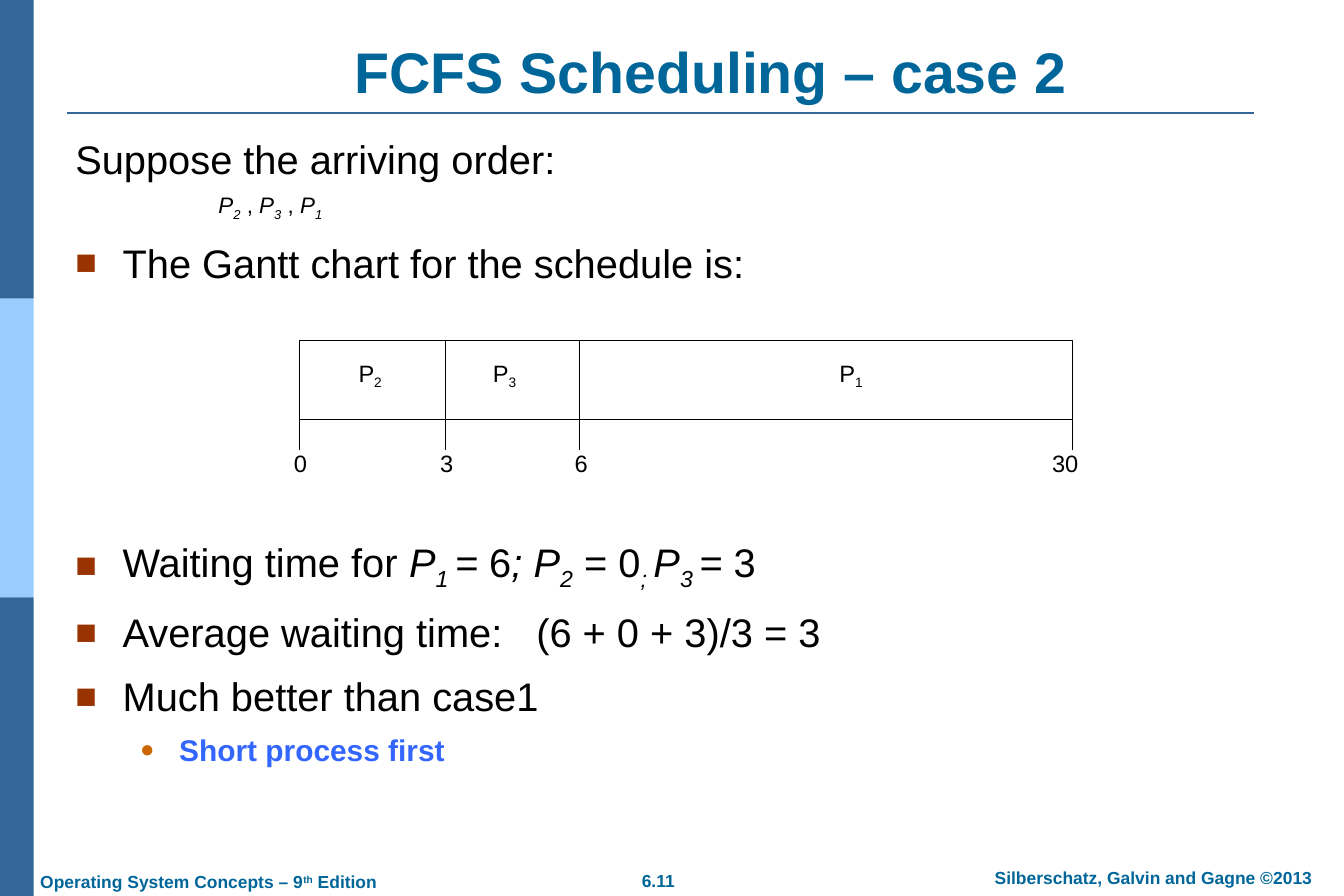
import pptx
import pptx.util
import pptx.dml.color
import pptx.enum.shapes
import pptx.enum.text
import pptx.oxml.ns
from lxml import etree

Pt = pptx.util.Pt
RGBColor = pptx.dml.color.RGBColor
Shape = pptx.enum.shapes.MSO_SHAPE
Align = pptx.enum.text.PP_ALIGN
Anchor = pptx.enum.text.MSO_ANCHOR
qn = pptx.oxml.ns.qn

TEAL = RGBColor(0x00, 0x66, 0x99)
NAVY = RGBColor(0x33, 0x66, 0x99)
SKY = RGBColor(0x99, 0xCC, 0xFF)
BLUE = RGBColor(0x33, 0x66, 0xFF)
RUST = RGBColor(0x99, 0x33, 0x00)
ORANGE = RGBColor(0xCC, 0x66, 0x00)
BLACK = RGBColor(0, 0, 0)
WHITE = RGBColor(255, 255, 255)

deck = pptx.Presentation()
deck.slide_width, deck.slide_height = Pt(1080), Pt(720)
page = deck.slides.add_slide(deck.slide_layouts[6])


def add_text(left, top, width, height, paragraphs, size, color=BLACK, bold=False,
             align=Align.CENTER, anchor=Anchor.TOP, inset=(10, 5), wrap=True):
    """Each paragraph is a list of (text, style); style holds i (italic), + or - (raised, lowered)."""
    box = page.shapes.add_textbox(Pt(left), Pt(top), Pt(width), Pt(height))
    frame = box.text_frame
    frame.word_wrap = wrap
    frame.vertical_anchor = anchor
    frame.margin_left = frame.margin_right = Pt(inset[0])
    frame.margin_top = frame.margin_bottom = Pt(inset[1])
    for number, spans in enumerate(paragraphs):
        para = frame.add_paragraph() if number else frame.paragraphs[0]
        para.alignment = align
        for text, style in spans:
            span = para.add_run()
            span.text = text
            span.font.name = "Arial"
            span.font.size = Pt(size)
            span.font.bold = bold
            span.font.italic = "i" in style
            span.font.color.rgb = color
            if "+" in style:
                span.font._element.set("baseline", "30000")
            if "-" in style:
                span.font._element.set("baseline", "-25000")
    return box


def add_line(x1, y1, x2, y2, color, width):
    line = page.shapes.add_connector(pptx.enum.shapes.MSO_CONNECTOR.STRAIGHT,
                                     Pt(x1), Pt(y1), Pt(x2), Pt(y2))
    line.line.color.rgb = color
    line.line.width = Pt(width)
    etree.SubElement(line._element.spPr, qn("a:effectLst"))


# Side band in three equal parts
for number, color in enumerate([NAVY, SKY, NAVY]):
    band = page.shapes.add_shape(Shape.RECTANGLE, 0, Pt(240 * number), Pt(27), Pt(240))
    band.shadow.inherit = False
    band.fill.solid()
    band.fill.fore_color.rgb = color
    band.line.fill.background()

# Title and rule
add_text(116, 29, 910, 60.5, [[("FCFS Scheduling – case 2", "")]], 46, TEAL, True,
         anchor=Anchor.BOTTOM)
add_line(54, 90.5, 1008, 90.5, NAVY, 1.5)

# Footer
add_text(22.3, 695, 294, 27, [[("Operating System Concepts – 9", ""), ("th", "+"),
                               (" Edition", "")]], 14, TEAL, True, Align.LEFT, wrap=False)
add_text(504, 694, 50, 27, [[("6.11", "")]], 14, TEAL, True, wrap=False)
add_text(767, 692, 320, 27, [[("Silberschatz, Galvin and Gagne ©2013", "")]], 14, TEAL, True)

# Body: spans, size, space before, left margin, hanging indent, bullet
SQUARE = ("■", RUST, 90)
DOT = ("●", ORANGE, 80)
body_rows = [
    ([("Suppose the arriving order:", "")], 32, 0, 0, 0, None),
    ([("P", "i"), ("2", "i-"), (" , ", ""), ("P", "i"), ("3", "i-"), (" , ", ""),
      ("P", "i"), ("1", "i-")], 18, 7, 115, 0, None),
    ([("The Gantt chart for the schedule is:", "")], 32, 13, 38, 38, SQUARE),
    ([("Waiting time for ", ""), ("P", "i"), ("1 ", "i-"), ("=", "i"), (" 6", ""),
      ("; P", "i"), ("2", "i-"), (" = 0", ""), ("; ", "i-"), ("P", "i"), ("3 ", "i-"),
      ("= ", "i"), ("3", "")], 32, 202, 38, 38, SQUARE),
    ([("Average waiting time:", ""), (" ", ""), ("(6 + 0 + 3)/3 = 3", "")],
     32, 13, 38, 38, SQUARE),
    ([("Much better than case1", "")], 32, 13, 38, 38, SQUARE),
    ([("Short process first", "")], 24, 9.5, 83.5, 31.5, DOT),
]
body = add_text(50.5, 103.5, 972, 554, [row[0] for row in body_rows], 32, align=Align.LEFT)
for para, (spans, size, before, margin, hanging, bullet) in zip(body.text_frame.paragraphs,
                                                                body_rows):
    para.space_before = Pt(before)
    props = para._p.get_or_add_pPr()
    props.set("marL", str(Pt(margin)))
    props.set("indent", str(-Pt(hanging)))
    if bullet:
        symbol, color, percent = bullet
        tint = etree.SubElement(props, qn("a:buClr"))
        etree.SubElement(tint, qn("a:srgbClr"), val=str(color))
        etree.SubElement(props, qn("a:buSzPct"), val=str(percent * 1000))
        etree.SubElement(props, qn("a:buFont"), typeface="Arial")
        etree.SubElement(props, qn("a:buChar"), char=symbol)
    for span in para.runs:
        span.font.size = Pt(size)

# Wide gap before the average, and the highlighted last row
body.text_frame.paragraphs[4].runs[1].font._element.set("spc", "1780")
highlight = body.text_frame.paragraphs[-1].runs[0].font
highlight.bold = True
highlight.color.rgb = BLUE

# Gantt bar
BAR_TOP, BAR_BOTTOM, TICK_END = 273.5, 337.5, 361.5
edges = [241, 358, 466, 862]
bar = page.shapes.add_shape(Shape.RECTANGLE, Pt(edges[0]), Pt(BAR_TOP),
                            Pt(edges[-1] - edges[0]), Pt(BAR_BOTTOM - BAR_TOP))
bar.shadow.inherit = False
bar.fill.solid()
bar.fill.fore_color.rgb = WHITE
bar.line.color.rgb = BLACK
bar.line.width = Pt(0.75)

# Dividers and ticks
for x in edges:
    add_line(x, BAR_BOTTOM, x, TICK_END, BLACK, 0.75)
for x in edges[1:-1]:
    add_line(x, BAR_TOP, x, BAR_BOTTOM, BLACK, 0.75)

# Process names and times, each centred on x
gantt_labels = [(center, 286, [("P", ""), (number, "-")])
                for center, number in [(297.5, "2"), (405.5, "3"), (684, "1")]]
gantt_labels += [(center, 357, [(time, "")])
                 for center, time in [(241.5, "0"), (359, "3"), (467, "6"), (856, "30")]]
for center, top, spans in gantt_labels:
    add_text(center - 18, top, 36, 30, [spans], 19, anchor=Anchor.MIDDLE,
             inset=(7.2, 3.6), wrap=False)

deck.save("out.pptx")
